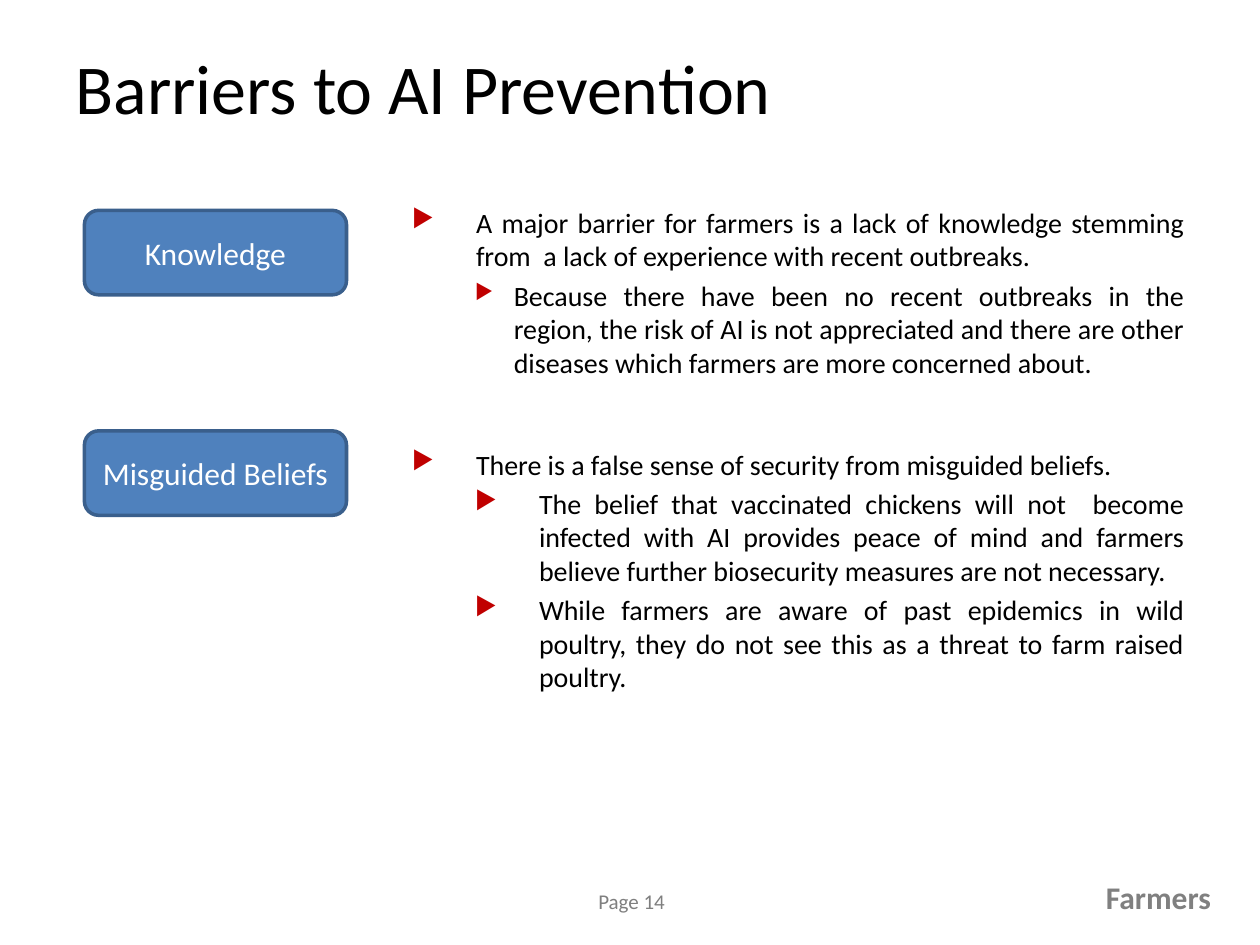
from lxml import etree
from pptx import Presentation
from pptx.dml.color import RGBColor
from pptx.enum.shapes import MSO_SHAPE as Shape
from pptx.enum.text import MSO_ANCHOR as Anchor, PP_ALIGN as Align
from pptx.oxml.ns import qn
from pptx.util import Inches, Pt

COLORS = {"text": "000000", "bullet": "C00000", "box": "4F81BD", "border": "3A5F8C",
          "label": "FFFFFF", "page": "7F7F7F", "section": "808080"}


def add_run(paragraph, text, size, color, bold=False):
    run = paragraph.add_run()
    run.text = text
    run.font.name = "Calibri"
    run.font.size = Pt(size)
    run.font.bold = bold
    run.font.color.rgb = RGBColor.from_string(COLORS[color])


def add_bullet(paragraph, margin, hanging, percent):
    """Give the paragraph a hanging indent and a coloured triangle bullet."""
    properties = paragraph._p.get_or_add_pPr()
    properties.set("marL", str(Inches(margin)))
    properties.set("indent", str(-Inches(hanging)))
    color = etree.SubElement(properties, qn("a:buClr"))
    etree.SubElement(color, qn("a:srgbClr"), val=COLORS["bullet"])
    etree.SubElement(properties, qn("a:buSzPct"), val=str(percent * 1000))
    etree.SubElement(properties, qn("a:buChar"), char="▶")


presentation = Presentation()
presentation.slide_width, presentation.slide_height = Inches(10), Inches(7.5)
slide = presentation.slides.add_slide(presentation.slide_layouts[5])

title = slide.shapes.title
title.left, title.top, title.width, title.height = map(Inches, (0.5, 0.3, 9.5, 0.78))
title.text_frame.vertical_anchor = Anchor.MIDDLE
paragraph = title.text_frame.paragraphs[0]
paragraph.alignment = Align.LEFT
add_run(paragraph, "Barriers to AI Prevention", 40, "text")

# label, box top, text top, text height, points as (level, margin, hanging, bullet percent, text)
barriers = [
    ("Knowledge", 1.67, 1.58, 1.58, [
        (0, 0.51, 0.51, 90, "A major barrier for farmers is a lack of knowledge stemming from  a lack "
         "of experience with recent outbreaks."),
        (1, 0.81, 0.31, 75, "Because there have been no recent outbreaks in the region, the risk of AI "
         "is not appreciated and there are other diseases which farmers are more concerned about."),
    ]),
    ("Misguided Beliefs", 3.42, 3.5, 2.58, [
        (0, 0.51, 0.51, 90, "There is a false sense of security from misguided beliefs."),
        (1, 1.01, 0.51, 90, "The belief that vaccinated chickens will not  become infected with AI "
         "provides peace of mind and farmers believe further biosecurity measures are not necessary."),
        (1, 1.01, 0.51, 90, "While farmers are aware of past epidemics in wild poultry, they do not "
         "see this as a threat to farm raised poultry."),
    ]),
]
for label, box_top, text_top, text_height, points in barriers:
    box = slide.shapes.add_shape(Shape.ROUNDED_RECTANGLE, Inches(0.67), Inches(box_top),
                                 Inches(2.08), Inches(0.67))
    box.shadow.inherit = False
    box.fill.solid()
    box.fill.fore_color.rgb = RGBColor.from_string(COLORS["box"])
    box.line.color.rgb = RGBColor.from_string(COLORS["border"])
    box.line.width = Pt(2)
    box.text_frame.vertical_anchor = Anchor.MIDDLE
    paragraph = box.text_frame.paragraphs[0]
    paragraph.alignment = Align.CENTER
    add_run(paragraph, label, 18, "label")

    frame = slide.shapes.add_textbox(Inches(3.17), Inches(text_top), Inches(6.33),
                                     Inches(text_height)).text_frame
    frame.word_wrap = True
    for index, (level, margin, hanging, percent, text) in enumerate(points):
        paragraph = frame.add_paragraph() if index else frame.paragraphs[0]
        add_bullet(paragraph, margin, hanging, percent)
        paragraph.level = level
        paragraph.alignment = Align.JUSTIFY
        paragraph.space_before = Pt(3.2 if index else 0)
        add_run(paragraph, text, 16, "text")

footers = [
    ("Page 14", 4.65, 7, 0.77, 0.3, Align.LEFT, 12, "page", False),
    ("Farmers", 8.67, 6.92, 1.04, 0.4, Align.RIGHT, 18, "section", True),
]
for text, left, top, width, height, alignment, size, color, bold in footers:
    footer = slide.shapes.add_textbox(Inches(left), Inches(top), Inches(width), Inches(height))
    footer.text_frame.word_wrap = False
    paragraph = footer.text_frame.paragraphs[0]
    paragraph.alignment = alignment
    add_run(paragraph, text, size, color, bold)

presentation.save("out.pptx")
